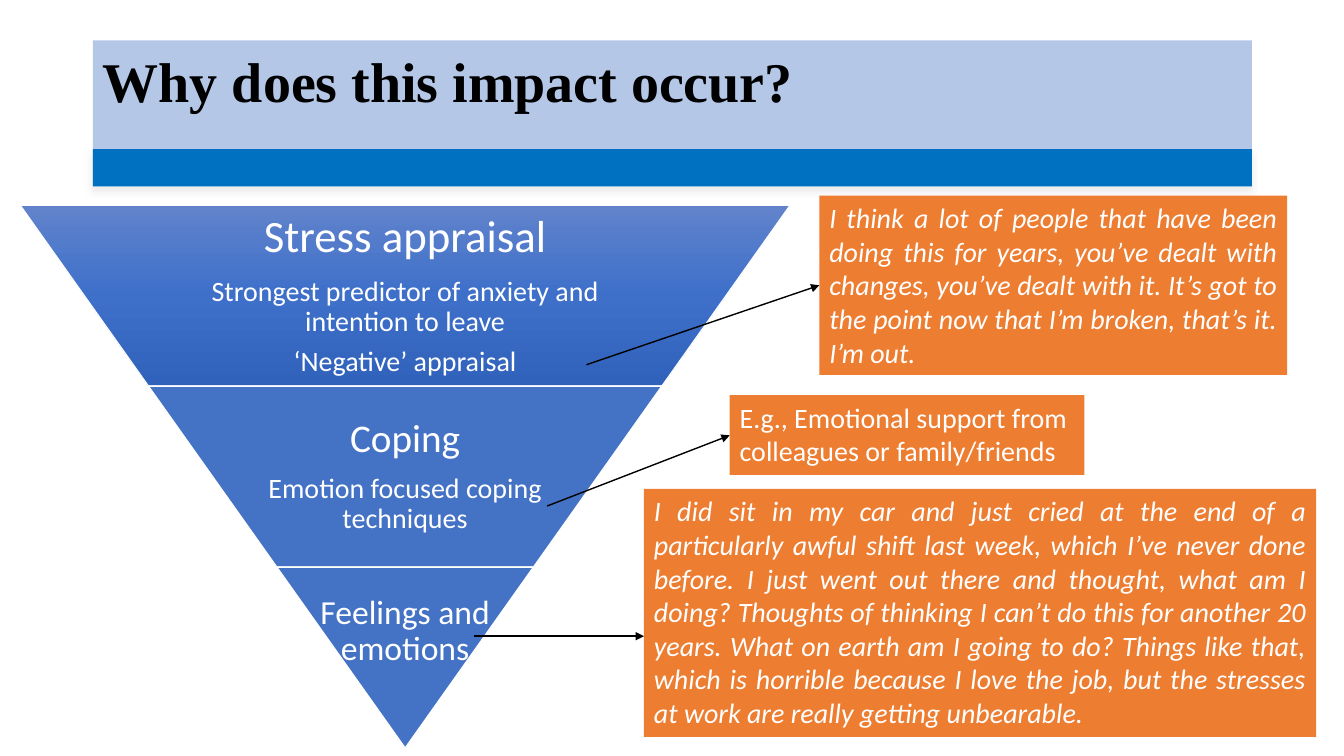
from lxml import etree
from pptx import Presentation
from pptx.dml.color import RGBColor
from pptx.enum.shapes import MSO_CONNECTOR, MSO_SHAPE
from pptx.enum.text import MSO_ANCHOR, MSO_AUTO_SIZE, PP_ALIGN
from pptx.oxml import parse_xml
from pptx.oxml.ns import qn
from pptx.util import Cm, Pt

RECT, TRAP = MSO_SHAPE.RECTANGLE, MSO_SHAPE.TRAPEZOID
STRAIGHT = MSO_CONNECTOR.STRAIGHT
FIXED = MSO_AUTO_SIZE.NONE
TOP, MIDDLE = MSO_ANCHOR.TOP, MSO_ANCHOR.MIDDLE
LEFT, CENTER, JUSTIFY = PP_ALIGN.LEFT, PP_ALIGN.CENTER, PP_ALIGN.JUSTIFY
NS = 'xmlns:a="http://schemas.openxmlformats.org/drawingml/2006/main"'


def color(code):
    return RGBColor.from_string(code)


def box(*sides):
    return [Cm(side) for side in sides]


class Deck:
    font = "Calibri"
    white, black = "FFFFFF", "000000"
    blue, orange = "4472C4", "ED7D31"
    pale, deep = "B4C7E7", "0070C0"

    def __init__(self):
        self.file = Presentation()
        self.file.slide_width, self.file.slide_height = Cm(33.87), Cm(19.05)
        self.slide = self.file.slides.add_slide(self.file.slide_layouts[5])
        self.shapes = self.slide.shapes

    def paint(self, shape, code):
        shape.fill.solid()
        shape.fill.fore_color.rgb = color(code)

    def frame(self, shape, anchor, inset=None):
        frame = shape.text_frame
        frame.word_wrap = True
        frame.auto_size = FIXED
        frame.vertical_anchor = anchor
        if inset is not None:
            frame.margin_left = frame.margin_right = Cm(inset)
            frame.margin_top = frame.margin_bottom = Cm(inset)
        return frame

    def add_run(self, para, text, size, code, align, font=None, bold=False, italic=False):
        para.alignment = align
        run = para.add_run()
        run.text = text
        run.font.name = font or self.font
        run.font.size = Pt(size)
        run.font.bold, run.font.italic = bold, italic
        run.font.color.rgb = color(code)

    def title(self, text, place):
        shape = self.shapes.title
        shape.left, shape.top, shape.width, shape.height = box(*place)
        self.paint(shape, self.pale)
        frame = self.frame(shape, TOP)
        frame.margin_top = Cm(0.35)
        para = frame.paragraphs[0]
        para.line_spacing = 0.9
        self.add_run(para, text, 40, self.black, LEFT, "Times New Roman", bold=True)

    def bar(self, place):
        shape = self.shapes.add_shape(RECT, *box(*place))
        self.paint(shape, self.deep)
        shape.line.fill.background()
        shape.shadow.inherit = False
        shape._element.spPr.find(qn("a:effectLst")).append(parse_xml(
            f'<a:outerShdw {NS} blurRad="63500" dist="38100" dir="6360000">'
            '<a:srgbClr val="E7E6E6"><a:alpha val="75000"/></a:srgbClr></a:outerShdw>'))

    def layer(self, place, slant, stops=()):
        shape = self.shapes.add_shape(TRAP, *box(*place))
        shape.rotation = 180
        shape.adjustments[0] = slant
        shape.shadow.inherit = False
        shape.line.color.rgb = color(self.white)
        shape.line.width = Pt(1)
        self.paint(shape, self.blue)
        if stops:
            self.blend(shape, stops)

    def blend(self, shape, stops):
        marks = "".join(f'<a:gs pos="{spot * 1000}"><a:srgbClr val="{code}"/></a:gs>'
                        for spot, code in stops)
        solid = shape._element.spPr.find(qn("a:solidFill"))
        solid.getparent().replace(solid, parse_xml(
            f'<a:gradFill {NS} rotWithShape="0"><a:gsLst>{marks}</a:gsLst>'
            '<a:lin ang="5400000" scaled="0"/></a:gradFill>'))

    def label(self, place, lines, lift):
        shape = self.shapes.add_textbox(*box(*place))
        frame = self.frame(shape, MIDDLE, 0.1)
        frame.margin_bottom = Cm(0.1 + lift)
        for spot, (text, size) in enumerate(lines):
            para = frame.add_paragraph() if spot else frame.paragraphs[0]
            para.line_spacing = 0.9
            para.space_after = Pt(size * 0.35)
            self.add_run(para, text, size, self.white, CENTER)

    def quote(self, place, text, spoken):
        shape = self.shapes.add_textbox(*box(*place))
        self.paint(shape, self.orange)
        para = self.frame(shape, TOP).paragraphs[0]
        align = JUSTIFY if spoken else LEFT
        self.add_run(para, text, 20, self.white, align, italic=spoken)

    def arrow(self, start, end):
        link = self.shapes.add_connector(STRAIGHT, *box(*start, *end))
        link.line.color.rgb = color(self.black)
        link.line.width = Pt(1)
        props = link._element.spPr
        etree.SubElement(props.find(qn("a:ln")), qn("a:tailEnd"), type="triangle")
        etree.SubElement(props, qn("a:effectLst"))


LAYERS = [
    (12.62, 0, [("Stress appraisal", 32),
                ("Strongest predictor of anxiety and intention to leave", 20),
                ("‘Negative’ appraisal", 20)]),
    (8.41, 0, [("Coping", 28), ("Emotion focused coping techniques", 20)]),
    (6.48, 1.32, [("Feelings and emotions", 24)]),
]
STOPS = [(0, "6183CB"), (50, "3E70CA"), (100, "3062BB")]
QUOTES = [
    ((20.65, 4.93, 11.79, 4.52), (14.78, 9.19), 7.19, True,
     "I think a lot of people that have been doing this for years, you’ve dealt with "
     "changes, you’ve dealt with it. It’s got to the point now that I’m broken, "
     "that’s it. I’m out."),
    ((18.39, 9.96, 8.94, 2.01), (13.79, 12.75), 10.97, False,
     "E.g., Emotional support from colleagues or family/friends"),
    ((16.23, 12.32, 16.94, 6.25), (11.94, 16.03), 16.03, True,
     "I did sit in my car and just cried at the end of a particularly awful shift last "
     "week, which I’ve never done before. I just went out there and thought, what am I "
     "doing? Thoughts of thinking I can’t do this for another 20 years. What on earth "
     "am I going to do? Things like that, which is horrible because I love the job, "
     "but the stresses at work are really getting unbearable."),
]


def main():
    deck = Deck()
    deck.title("Why does this impact occur?", (2.34, 1.02, 29.21, 3.68))
    deck.bar((2.34, 3.76, 29.21, 0.94))

    mid, top, wide, tall = 10.21, 5.17, 19.41, 4.56
    step = wide / len(LAYERS)
    for row, (room, lift, lines) in enumerate(LAYERS):
        width, y = wide - row * step, top + row * tall
        deck.layer((mid - width / 2, y, width, tall), step / 2 / tall,
                   () if row else STOPS)
        deck.label((mid - room / 2, y, room, tall), lines, lift)

    for place, start, y, spoken, text in QUOTES:
        deck.quote(place, text, spoken)
        deck.arrow(start, (place[0], y))

    deck.file.save("out.pptx")


if __name__ == "__main__":
    main()
